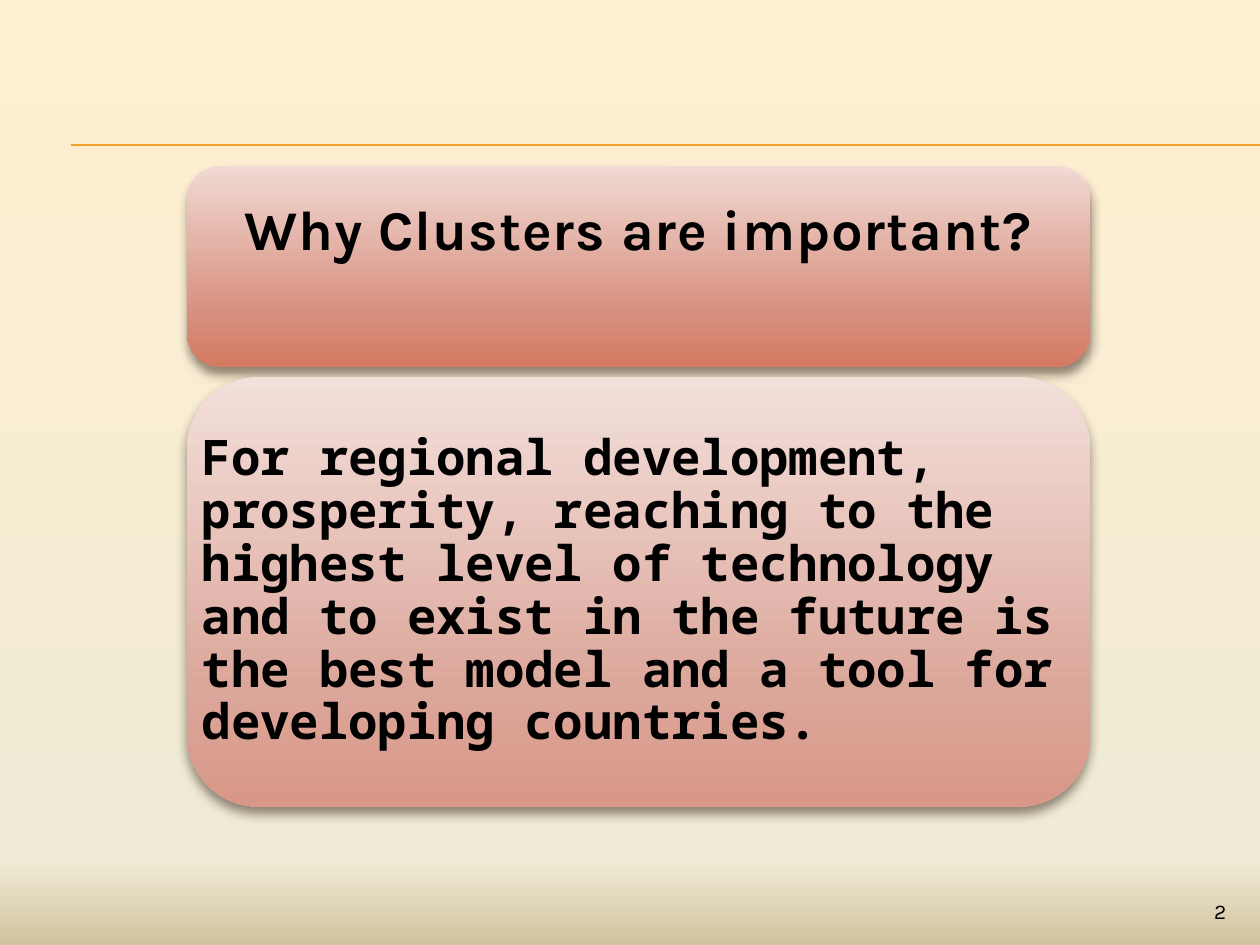
from lxml import etree
from pptx import Presentation
from pptx import util as u
from pptx.dml.color import RGBColor
from pptx.enum import shapes, text
from pptx.oxml import parse_xml
from pptx.oxml.ns import nsdecls, qn

BOX_LEFT, BOX_W = 3.77, 18.21


def color(hex_):
    return RGBColor.from_string(hex_)


def gradient(owner, fill, stops):
    """Fill from top to bottom with (percent, hex) stops."""
    fill.gradient()
    fill.gradient_angle = 270
    gs_list = owner.element.xpath(".//a:gsLst")[0]
    for gs in list(gs_list):
        gs_list.remove(gs)
    for pos, hex_ in stops:
        gs = etree.SubElement(gs_list, qn("a:gs"), pos=str(pos * 1000))
        etree.SubElement(gs, qn("a:srgbClr"), val=hex_)


def drop_shadow(sp):
    sp.element.spPr.append(parse_xml(
        f'<a:effectLst {nsdecls("a")}><a:outerShdw blurRad="76200" dist="50800" '
        'dir="5400000" rotWithShape="0"><a:srgbClr val="4E3B30">'
        '<a:alpha val="60000"/></a:srgbClr></a:outerShdw></a:effectLst>'))


def write(tf, content, font, size, align, bold=False):
    tf.word_wrap = True
    tf.text = content
    p = tf.paragraphs[0]
    p.alignment = align
    r = p.runs[0]
    r.font.name, r.font.size, r.font.bold = font, u.Pt(size), bold
    r.font.color.rgb = color("000000")
    return p


def add_rules(s, left, right, tops):
    """Thin header rules running to the slide edge."""
    for y in tops:
        ln = s.shapes.add_connector(shapes.MSO_CONNECTOR.STRAIGHT, u.Cm(left),
                                    u.Cm(y), u.Cm(right), u.Cm(y))
        ln.line.color.rgb = color("F0A22E")
        ln.line.width = u.Pt(0.75)
        etree.SubElement(ln.element.spPr, qn("a:effectLst"))


def add_panel(s, top, height, stops, inset, content, font, size, align,
              bottom_gap=0, spacing=0):
    """Rounded gradient panel with a text box that spans its full width."""
    box = [u.Cm(v) for v in (BOX_LEFT, top, BOX_W, height)]
    sp = s.shapes.add_shape(shapes.MSO_SHAPE.ROUNDED_RECTANGLE, *box)
    gradient(sp, sp.fill, stops)
    sp.line.fill.background()
    drop_shadow(sp)

    tf = s.shapes.add_textbox(*box).text_frame
    tf.vertical_anchor = text.MSO_ANCHOR.MIDDLE
    tf.margin_left = tf.margin_right = tf.margin_top = u.Cm(inset)
    tf.margin_bottom = u.Cm(inset + bottom_gap)
    p = write(tf, content, font, size, align, bold=True)
    p.line_spacing = 0.9
    if spacing:
        p.runs[0].font._element.set("spc", str(spacing))


def add_page_number(s, left, top, width, height):
    tb = s.shapes.add_textbox(u.Cm(left), u.Cm(top), u.Cm(width), u.Cm(height))
    write(tb.text_frame, "2", "Karla", 12, text.PP_ALIGN.RIGHT)


def main():
    prs = Presentation()
    prs.slide_width, prs.slide_height = u.Cm(25.4), u.Cm(19.05)
    s = prs.slides.add_slide(prs.slide_layouts[6])

    # Background and header rules
    gradient(s, s.background.fill,
             [(0, "FFEFD1"), (91, "F0EBD5"), (100, "D1C39F")])
    add_rules(s, 1.43, 25.4, (2.92, 2.94))

    # Question
    add_panel(s, 3.35, 4.04, [(0, "F1D9D4"), (72, "D89180"), (100, "D47A62")],
              0.33, "Why Clusters are important?", "Karla", 32,
              text.PP_ALIGN.CENTER, bottom_gap=1.38, spacing=50)

    # Answer
    add_panel(s, 7.6, 8.66, [(0, "F3E0DB"), (72, "DCA79B"), (100, "D89787")],
              0.3, "For regional development, prosperity, reaching to the highest "
              "level of technology and to exist in the future is the best model "
              "and a tool for developing countries.", "Noto Sans Mono", 28,
              text.PP_ALIGN.LEFT)

    add_page_number(s, 22.86, 17.98, 2.11, 0.69)
    prs.save("out.pptx")


if __name__ == "__main__":
    main()
